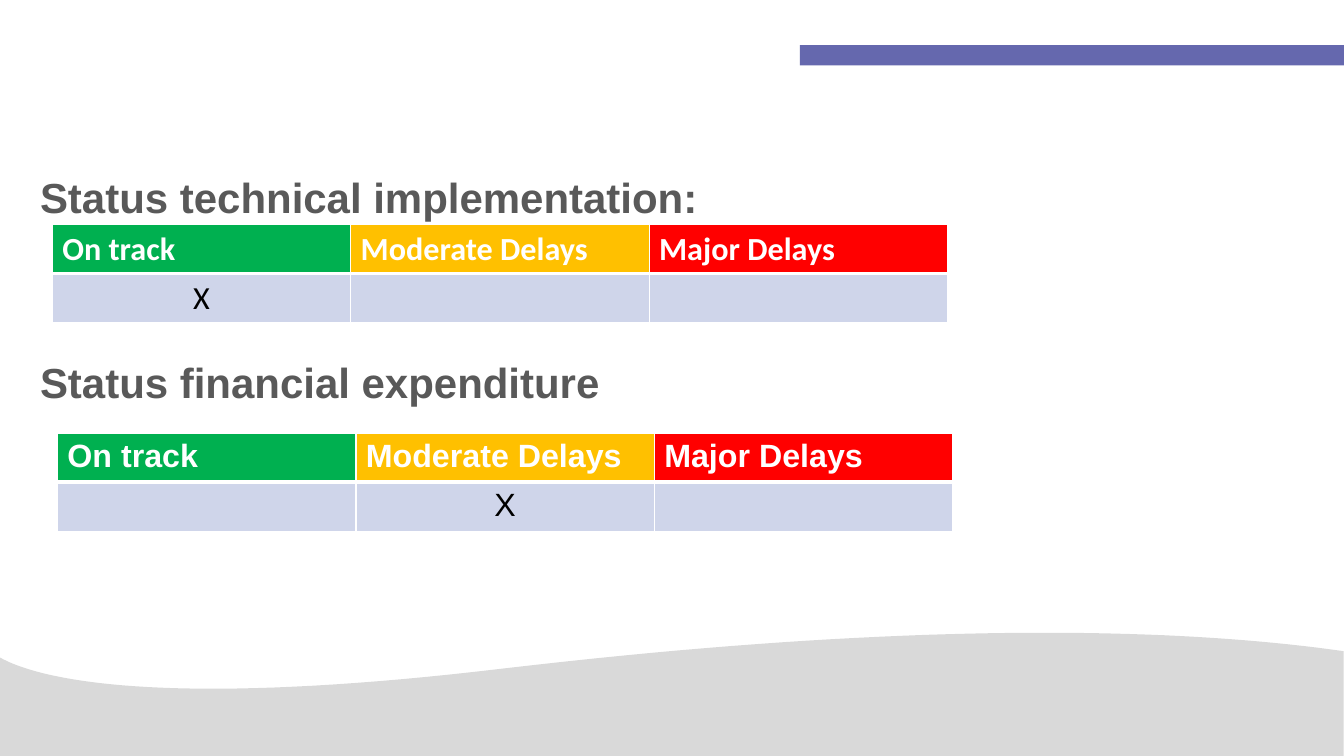
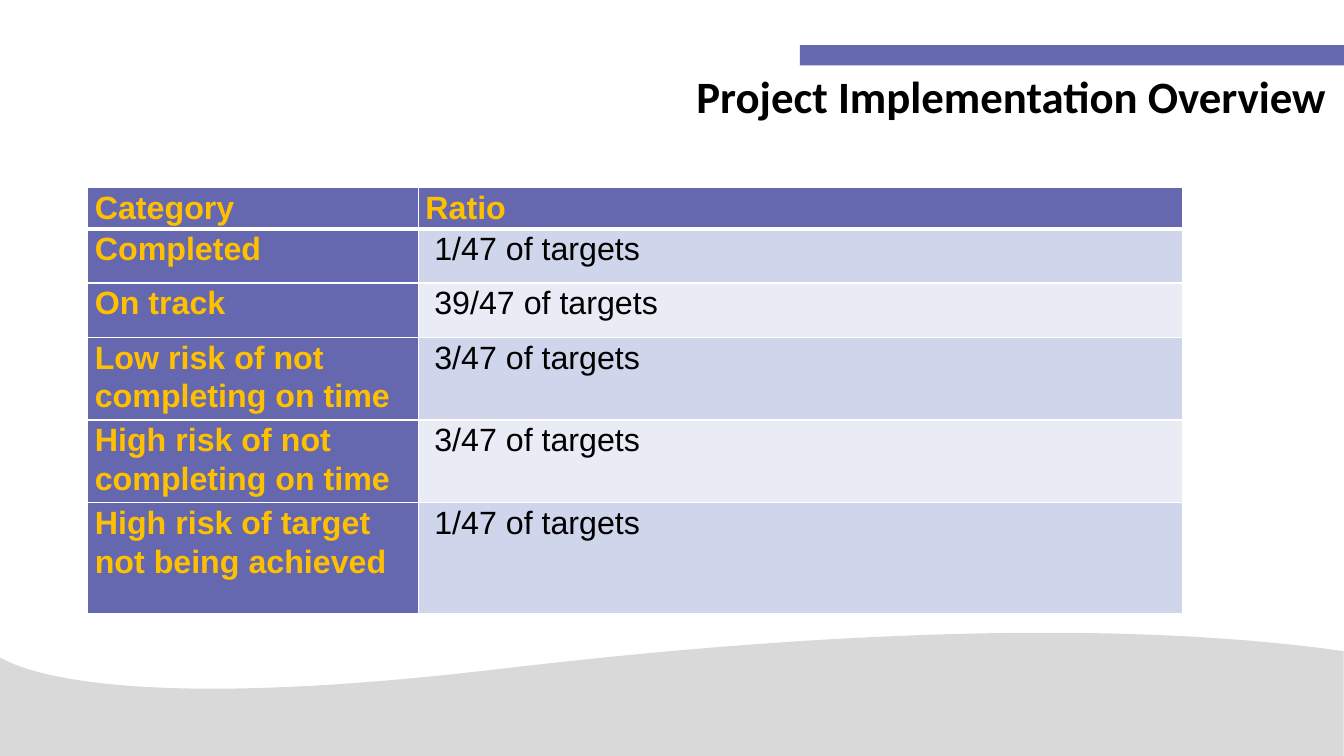
"""Build two project status slides with a shared band and wave."""
from dataclasses import dataclass
from typing import Any

from lxml.etree import SubElement
from pptx import Presentation
from pptx.dml.color import RGBColor
from pptx.enum.shapes import MSO_AUTO_SHAPE_TYPE as ShapeType
from pptx.enum.text import PP_PARAGRAPH_ALIGNMENT as Alignment
from pptx.oxml.ns import qn
from pptx.slide import Slide
from pptx.util import Cm, Pt

PURPLE, GOLD, GREEN, RED = "6568AE", "FFC000", "00B050", "FF0000"
WHITE, BLACK, GREY, SILVER = "FFFFFF", "000000", "595959", "D9D9D9"
STRIPES = ("CFD5EA", "E9EBF5")

Point = tuple[float, float]
WAVE_START: Point = (33.86, 16.41)
WAVE_CURVES: tuple[tuple[Point, Point, Point], ...] = (
    ((29.59, 15.8), (22.91, 15.65), (12.75, 16.84)),
    ((3.38, 17.96), (0.66, 16.97), (-0.05, 16.54)),
)
WAVE_BOTTOM = 19.05
CURVE_STEPS = 40


@dataclass(frozen=True)
class TextStyle:
    size: float
    color: str
    name: str = "Arial"
    bold: bool = True


@dataclass(frozen=True)
class Cell:
    text: str
    fill: str
    style: TextStyle
    format: dict[str, Any]


@dataclass(frozen=True)
class TableLayout:
    left: float
    top: float
    columns: tuple[float, ...]
    rows: tuple[float, ...]
    margins: tuple[float, float] = (0.25, 0.13)


@dataclass(frozen=True)
class Status:
    left: float
    top: float
    font: str
    marked: int


STATUS_HEADERS = (("On track", GREEN), ("Moderate Delays", GOLD), ("Major Delays", RED))
STATUSES = (Status(1.32, 5.66, "Calibri", 0), Status(1.45, 10.92, "Arial", 1))
HEADINGS = (("Status technical implementation:", 0), ("Status financial expenditure", 92))
RATIOS = (
    ("Completed", " 1/47 of targets"),
    ("On track", " 39/47 of targets"),
    ("Low risk of not completing on time", " 3/47 of targets"),
    ("High risk of not completing on time", " 3/47 of targets"),
    ("High risk of target not being achieved", " 1/47 of targets"),
)


def rgb(value: str) -> RGBColor:
    return RGBColor.from_string(value)


def apply_format(target: Any, values: dict[str, Any]) -> None:
    for name, value in values.items():
        setattr(target, name, value)


def write_text(paragraph: Any, text: str, style: TextStyle, values: dict[str, Any]) -> None:
    apply_format(paragraph, values)
    if text:
        run = paragraph.add_run()
        run.text = text
        apply_format(run.font, {"name": style.name, "size": Pt(style.size), "bold": style.bold})
        run.font.color.rgb = rgb(style.color)


def paint(shape: Any, color: str) -> None:
    shape.shadow.inherit = False
    shape.fill.solid()
    shape.fill.fore_color.rgb = rgb(color)
    shape.line.fill.background()


def curve_point(points: tuple[Point, ...], t: float) -> Point:
    weights = ((1 - t) ** 3, 3 * t * (1 - t) ** 2, 3 * t * t * (1 - t), t ** 3)
    x, y = (sum(w * point[axis] for w, point in zip(weights, points)) for axis in (0, 1))
    return Cm(x), Cm(y)


def add_wave(slide: Slide) -> None:
    right, top = WAVE_START
    builder = slide.shapes.build_freeform(Cm(right), Cm(WAVE_BOTTOM))
    outline = [(Cm(right), Cm(top))]
    start = WAVE_START
    for curve in WAVE_CURVES:
        outline += [curve_point((start, *curve), step / CURVE_STEPS)
                    for step in range(1, CURVE_STEPS + 1)]
        start = curve[-1]
    outline.append((Cm(start[0]), Cm(WAVE_BOTTOM)))
    builder.add_line_segments(outline, close=True)
    paint(builder.convert_to_shape(), SILVER)


def add_base_slide(presentation: Any) -> Slide:
    slide = presentation.slides.add_slide(presentation.slide_layouts[6])
    add_wave(slide)
    band = slide.shapes.add_shape(
        ShapeType.RECTANGLE, Cm(20.16), Cm(1.14), Cm(13.71), Cm(0.51))
    paint(band, PURPLE)
    return slide


def add_text_box(slide: Slide, left: float, top: float, width: float, height: float) -> Any:
    box = slide.shapes.add_textbox(Cm(left), Cm(top), Cm(width), Cm(height))
    box.text_frame.word_wrap = True
    return box.text_frame


def add_borders(cell: Any, row: int) -> None:
    properties = cell._tc.get_or_add_tcPr()
    thick = {"lnB": row == 0, "lnT": row == 1}
    for side in ("lnL", "lnR", "lnT", "lnB"):
        width = Pt(3 if thick.get(side) else 1)
        line = SubElement(properties, qn(f"a:{side}"), w=str(width))
        fill = SubElement(line, qn("a:solidFill"))
        SubElement(fill, qn("a:srgbClr"), val=WHITE)


def add_grid(slide: Slide, layout: TableLayout, cells: list[list[Cell]]) -> None:
    table = slide.shapes.add_table(
        len(layout.rows), len(layout.columns), Cm(layout.left), Cm(layout.top),
        Cm(sum(layout.columns)), Cm(sum(layout.rows))).table
    for column, width in zip(table.columns, layout.columns):
        column.width = Cm(width)
    for row, height in zip(table.rows, layout.rows):
        row.height = Cm(height)
    side, edge = (Cm(margin) for margin in layout.margins)
    margins = {"margin_left": side, "margin_right": side,
               "margin_top": edge, "margin_bottom": edge}
    for row_index, row_cells in enumerate(cells):
        for column_index, content in enumerate(row_cells):
            cell = table.cell(row_index, column_index)
            apply_format(cell, margins)
            add_borders(cell, row_index)
            cell.fill.solid()
            cell.fill.fore_color.rgb = rgb(content.fill)
            write_text(cell.text_frame.paragraphs[0], content.text, content.style, content.format)


def add_status_table(slide: Slide, status: Status) -> None:
    header_style = TextStyle(23, WHITE, status.font)
    mark_style = TextStyle(23, BLACK, status.font, False)
    headers = [Cell(text, fill, header_style, {}) for text, fill in STATUS_HEADERS]
    marks = [Cell("X" if index == status.marked else "", STRIPES[0], mark_style,
                  {"alignment": Alignment.CENTER}) for index in range(len(headers))]
    layout = TableLayout(status.left, status.top, (7.52,) * 3, (1.04,) * 2)
    add_grid(slide, layout, [headers, marks])


def build_status_slide(presentation: Any) -> None:
    slide = add_base_slide(presentation)
    frame = add_text_box(slide, 0.76, 4.06, 30.86, 11.61)
    for index, (text, gap) in enumerate(HEADINGS):
        paragraph = frame.add_paragraph() if index else frame.paragraphs[0]
        write_text(paragraph, text, TextStyle(30, GREY),
                   {"line_spacing": Pt(40), "space_before": Pt(gap)})
    for status in STATUSES:
        add_status_table(slide, status)


def build_overview_slide(presentation: Any) -> None:
    slide = add_base_slide(presentation)
    label, value = TextStyle(23, GOLD), TextStyle(23, BLACK, bold=False)
    spacing = {"line_spacing": 1.07}
    cells = [[Cell(text, PURPLE, label, spacing) for text in ("Category", "Ratio")]]
    for index, (category, ratio) in enumerate(RATIOS):
        cells.append([Cell(category, PURPLE, label, spacing),
                      Cell(ratio, STRIPES[index % 2], value, spacing)])
    layout = TableLayout(2.21, 4.72, (8.33, 19.25),
                         (1.02, 1.37, 1.37, 2.01, 2.01, 2.79), (0.18, 0))
    add_grid(slide, layout, cells)
    frame = add_text_box(slide, 17.3, 1.6, 17.5, 1.63)
    write_text(frame.paragraphs[0], "Project Implementation Overview",
               TextStyle(32, BLACK, "Calibri"), {})


def main() -> None:
    presentation = Presentation()
    apply_format(presentation, {"slide_width": Cm(33.87), "slide_height": Cm(19.05)})
    build_status_slide(presentation)
    build_overview_slide(presentation)
    presentation.save("out.pptx")


if __name__ == "__main__":
    main()
